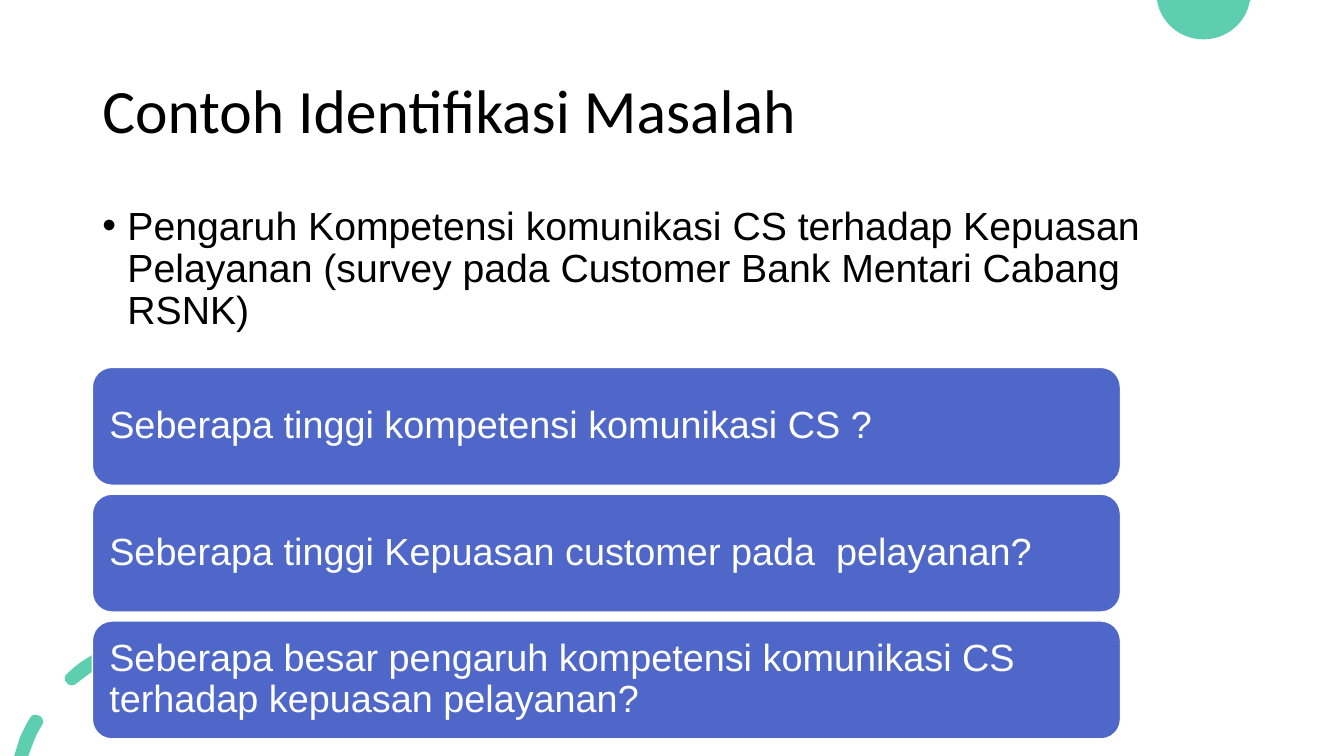
import dataclasses
import typing

import lxml.etree
import pptx
import pptx.dml.color
import pptx.enum.shapes
import pptx.enum.text
import pptx.oxml.ns
import pptx.util

Pt = pptx.util.Pt
qn = pptx.oxml.ns.qn
Point = tuple[float, float]
MIDDLE = pptx.enum.text.MSO_ANCHOR.MIDDLE
TOP = pptx.enum.text.MSO_ANCHOR.TOP

GREEN = "5DCEAF"
BLUE = "4E67C8"
WHITE = "FFFFFF"
BLACK = "000000"

CARD_LEFT, CARD_TOP = 66, 262.4
CARD_WIDTH, CARD_HEIGHT = 734.4, 84.24
CARD_PITCH = 90.6


@dataclasses.dataclass(frozen=True)
class Outline:
    start: Point
    segments: list[tuple[Point, ...]]


@dataclasses.dataclass(frozen=True)
class Style:
    font: str
    size: float
    color: str
    anchor: pptx.enum.text.MSO_ANCHOR
    bullet: bool = False


@dataclasses.dataclass(frozen=True)
class TextArea:
    text: str
    top: float
    height: float
    style: Style


CAP = [
    Outline((826.56, 0), [
        ((893.52, 0),),
        ((892.8, 0.72),),
        ((889.92, 16.56), (876.24, 28.08), (859.68, 28.08)),
        ((843.12, 28.08), (829.44, 16.56), (826.56, 0.72)),
    ]),
]

DASHES = [
    Outline((25.92, 510.48), [
        ((24.48, 509.76), (22.32, 511.2), (21.6, 512.64)),
        ((18.72, 516.96), (16.56, 522), (14.4, 526.32)),
        ((10.08, 540),),
        ((20.16, 540),),
        ((23.76, 530.64),),
        ((25.2, 526.32), (27.36, 522), (30.24, 517.68)),
        ((31.68, 515.52), (30.24, 511.92), (28.08, 511.2)),
        ((27.36, 510.48), (26.64, 510.48), (25.92, 510.48)),
    ]),
    Outline((75.6, 462.96), [
        ((74.88, 462.96), (74.16, 462.96), (74.16, 463.68)),
        ((64.8, 468), (55.44, 473.76), (48.24, 480.96)),
        ((46.08, 482.4), (45.36, 486), (47.52, 487.44)),
        ((48.24, 488.88), (49.68, 489.6), (51.12, 489.6)),
        ((52.56, 489.6), (53.28, 488.88), (54.72, 488.16)),
        ((61.92, 482.4), (69.84, 476.64), (78.48, 472.32)),
        ((80.64, 470.88), (82.08, 468), (80.64, 465.84)),
        ((79.92, 463.68), (77.76, 462.96), (75.6, 462.96)),
    ]),
    Outline((128.88, 450), [
        ((123.84, 450), (118.8, 450.72), (113.76, 451.44)),
        ((110.88, 451.44), (108.72, 454.32), (109.44, 457.2)),
        ((109.44, 459.36), (111.6, 461.52), (113.76, 461.52)),
        ((124.56, 460.08), (133.92, 460.08), (143.28, 460.8)),
        ((146.16, 461.52), (149.04, 459.36), (149.04, 457.2)),
        ((149.76, 454.32), (147.6, 451.44), (144.72, 451.44)),
        ((139.68, 450.72), (133.92, 450), (128.88, 450)),
    ]),
]

TEXT_AREAS = [
    TextArea("Contoh Identifikasi Masalah", 28.8, 104.4,
             Style("Calibri", 44, BLACK, MIDDLE)),
    TextArea("Pengaruh Kompetensi komunikasi CS terhadap Kepuasan Pelayanan "
             "(survey pada Customer Bank Mentari Cabang RSNK)", 143.75, 303.84,
             Style("Arial", 28, BLACK, TOP, bullet=True)),
]

QUESTION_STYLE = Style("Arial", 27, WHITE, MIDDLE)
QUESTIONS = [
    "Seberapa tinggi kompetensi komunikasi CS ?",
    "Seberapa tinggi Kepuasan customer pada  pelayanan?",
    "Seberapa besar pengaruh kompetensi komunikasi CS terhadap kepuasan pelayanan?",
]


def rgb(code: str) -> pptx.dml.color.RGBColor:
    return pptx.dml.color.RGBColor.from_string(code)


def place(point: Point) -> tuple[int, int]:
    return Pt(point[0]), Pt(point[1])


def bend_segments(shape: typing.Any, segments: list[tuple[Point, ...]]) -> None:
    lines = list(shape._element.iter(qn("a:lnTo")))
    for line, segment in zip(lines, segments):
        if len(segment) == 1:
            continue
        curve = lxml.etree.Element(qn("a:cubicBezTo"))
        for x, y in map(place, segment):
            corner = lxml.etree.SubElement(curve, qn("a:pt"))
            corner.set("x", str(x - shape.left))
            corner.set("y", str(y - shape.top))
        line.getparent().replace(line, curve)


def draw_ornament(page: typing.Any, outlines: list[Outline]) -> None:
    builder = page.shapes.build_freeform(*place(outlines[0].start), scale=1.0)
    for index, outline in enumerate(outlines):
        if index:
            builder.move_to(*place(outline.start))
        builder.add_line_segments([place(segment[-1]) for segment in outline.segments])
    shape = builder.convert_to_shape()
    bend_segments(shape, [segment for outline in outlines for segment in outline.segments])
    shape.shadow.inherit = False
    shape.fill.solid()
    shape.fill.fore_color.rgb = rgb(GREEN)
    shape.line.fill.background()


def add_bullet(para: typing.Any) -> None:
    properties = para._p.get_or_add_pPr()
    properties.set("marL", str(Pt(18)))
    properties.set("indent", str(-Pt(18)))
    for tag, name, value in (("a:buFont", "typeface", "Arial"), ("a:buChar", "char", "•")):
        lxml.etree.SubElement(properties, qn(tag)).set(name, value)


def write_text(box: typing.Any, text: str, style: Style) -> None:
    frame = box.text_frame
    frame.word_wrap = True
    frame.vertical_anchor = style.anchor
    para = frame.paragraphs[0]
    para.alignment = pptx.enum.text.PP_ALIGN.LEFT
    para.line_spacing = 0.9
    if style.bullet:
        add_bullet(para)
    span = para.add_run()
    span.text = text
    span.font.name = style.font
    span.font.size = Pt(style.size)
    span.font.color.rgb = rgb(style.color)


def draw_text_area(page: typing.Any, area: TextArea) -> None:
    box = page.shapes.add_textbox(Pt(66), Pt(area.top), Pt(828), Pt(area.height))
    write_text(box, area.text, area.style)


def draw_question(page: typing.Any, index: int, text: str) -> None:
    card = page.shapes.add_shape(
        pptx.enum.shapes.MSO_SHAPE.ROUNDED_RECTANGLE,
        Pt(CARD_LEFT), Pt(CARD_TOP + index * CARD_PITCH), Pt(CARD_WIDTH), Pt(CARD_HEIGHT))
    card.shadow.inherit = False
    card.fill.solid()
    card.fill.fore_color.rgb = rgb(BLUE)
    card.line.color.rgb = rgb(WHITE)
    card.line.width = Pt(1)
    frame = card.text_frame
    frame.margin_left = frame.margin_right = Pt(8)
    frame.margin_top = frame.margin_bottom = Pt(8)
    write_text(card, text, QUESTION_STYLE)


def main() -> None:
    deck = pptx.Presentation()
    deck.slide_width, deck.slide_height = Pt(960), Pt(540)
    page = deck.slides.add_slide(deck.slide_layouts[6])
    for outlines in (CAP, DASHES):
        draw_ornament(page, outlines)
    for area in TEXT_AREAS:
        draw_text_area(page, area)
    for index, question in enumerate(QUESTIONS):
        draw_question(page, index, question)
    deck.save("out.pptx")


if __name__ == "__main__":
    main()
